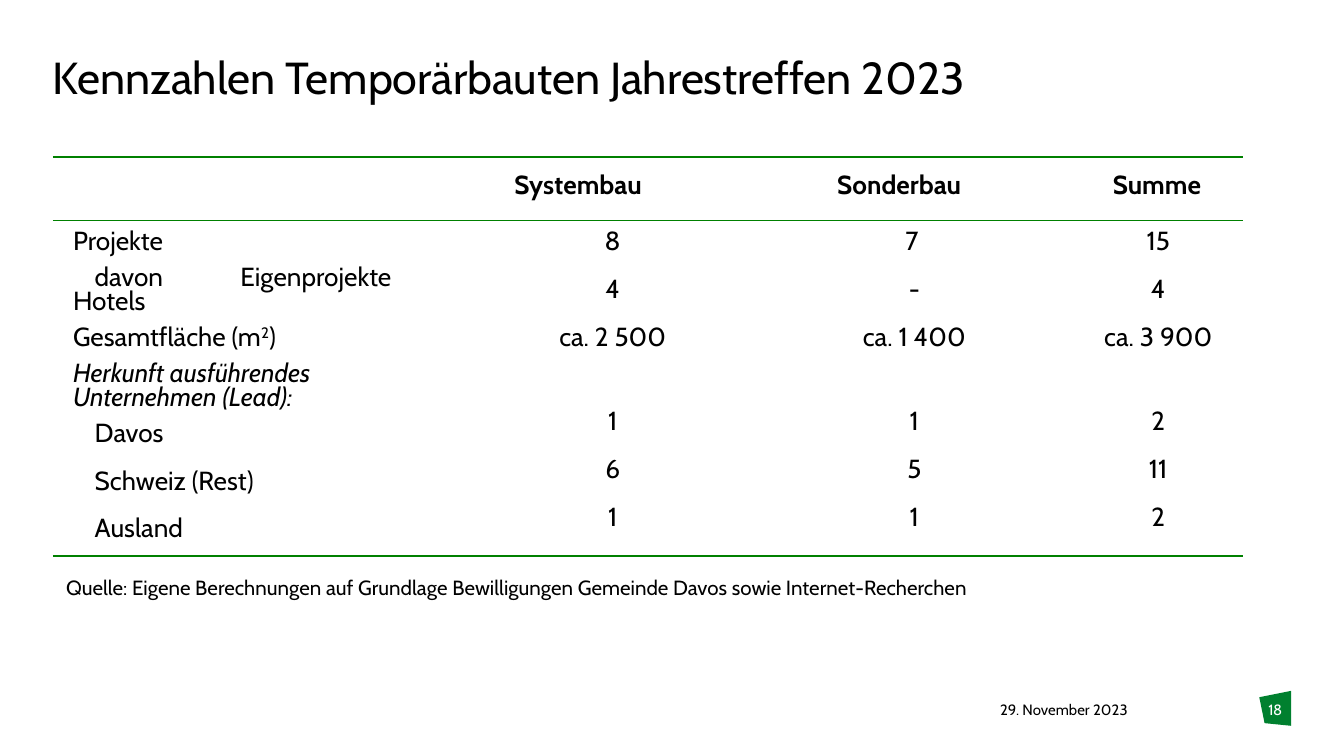
from dataclasses import dataclass

import lxml.etree
import pptx
import pptx.dml.color
import pptx.enum.text
import pptx.oxml.ns
import pptx.util

Cm, Pt = pptx.util.Cm, pptx.util.Pt
RGB = pptx.dml.color.RGBColor
Align = pptx.enum.text.PP_ALIGN
Anchor = pptx.enum.text.MSO_ANCHOR
qn = pptx.oxml.ns.qn


@dataclass(frozen=True)
class Theme:
    font: str = "Cabin"
    text: str = "000000"
    inverse: str = "FFFFFF"
    rule: str = "008000"
    badge: str = "00802F"
    title_size: float = 24
    table_size: float = 14
    source_size: float = 11
    footer_size: float = 8
    thick_rule: float = 1.5
    thin_rule: float = 1
    no_table_style: str = "{2D5ABB26-0587-4C30-8999-92F81FD0307C}"


THEME = Theme()


@dataclass(frozen=True)
class Label:
    text: str
    left: float
    top: float
    width: float
    height: float
    size: float
    color: str = THEME.text
    align: Align = Align.LEFT
    inset: tuple[float, float] = (0, 0)
    line_spacing: float = 1.0
    tracking: int = 0


@dataclass(frozen=True)
class Row:
    label: str  # "^" encloses a superscript
    values: tuple[str, str, str]
    sub_item: bool = False
    group: bool = False
    values_on_top: bool = False


@dataclass(frozen=True)
class Indent:
    left: float = 0.18
    first: float = 0
    right: float = 0


LABELS = [
    Label("29. November 2023", 18.9, 13.24, 3.28, 0.5, THEME.footer_size),
    Label("Kennzahlen Temporärbauten Jahrestreffen 2023", 1, 1.06, 23.42, 1.7,
          THEME.title_size, line_spacing=0.9),
    Label("18", 23.8, 13.24, 0.61, 0.76, THEME.footer_size, THEME.inverse,
          Align.CENTER, tracking=-30),
    Label("Quelle: Eigene Berechnungen auf Grundlage Bewilligungen Gemeinde Davos "
          "sowie Internet-Recherchen", 1, 10.74, 18.47, 0.74, THEME.source_size,
          inset=(0.25, 0.13)),
]

HEADINGS = ("Systembau", "Sonderbau", "Summe")
ROWS = [
    Row("Projekte", ("8", "7", "15")),
    Row("davon Eigenprojekte Hotels", ("4", "-", "4"), sub_item=True),
    Row("Gesamtfläche (m^2^)", ("ca. 2 500", "ca. 1 400", "ca. 3 900")),
    Row("Herkunft ausführendes Unternehmen (Lead):", ("", "", ""), group=True),
    Row("Davos", ("1", "1", "2"), sub_item=True, values_on_top=True),
    Row("Schweiz (Rest)", ("6", "5", "11"), sub_item=True, values_on_top=True),
    Row("Ausland", ("1", "1", "2"), sub_item=True, values_on_top=True),
]

COLUMN_WIDTHS = (6.58, 6.7, 5.82, 3.4)
HEADER_HEIGHT, ROW_HEIGHT = 1.2, 0.9
CELL_INSET = 0.18
HEADING_INDENTS = (Indent(0.56, right=0.57), Indent(right=0.57), Indent(right=0.05))
VALUE_INDENTS = (Indent(1.3), Indent(), Indent())
HANGING_INDENT = Indent(1.09, -1)
LABEL_INDENT, SUB_ITEM_INDENT = Indent(0.2), Indent(0.2, 0.41)


def style_span(span, size: float, color: str, bold: bool = False, italic: bool = False) -> None:
    span.font.name = THEME.font
    span.font.size = Pt(size)
    span.font.color.rgb = RGB.from_string(color)
    span.font.bold = bold
    span.font.italic = italic


def add_label(page, label: Label) -> None:
    box = page.shapes.add_textbox(Cm(label.left), Cm(label.top), Cm(label.width), Cm(label.height))
    frame = box.text_frame
    frame.word_wrap = True
    frame.margin_left = frame.margin_right = Cm(label.inset[0])
    frame.margin_top = frame.margin_bottom = Cm(label.inset[1])
    frame.text = label.text
    para = frame.paragraphs[0]
    para.alignment = label.align
    para.line_spacing = label.line_spacing
    span = para.runs[0]
    style_span(span, label.size, label.color)
    if label.tracking:
        span._r.get_or_add_rPr().set("spc", str(label.tracking))


def add_badge(page) -> None:
    builder = page.shapes.build_freeform(Cm(23.8), Cm(13.18), scale=1.0)
    corners = [(24.4, 13.06), (24.4, 13.72), (23.9, 13.67)]
    builder.add_line_segments([(Cm(x), Cm(y)) for x, y in corners], close=True)
    badge = builder.convert_to_shape()
    badge.shadow.inherit = False
    badge.fill.solid()
    badge.fill.fore_color.rgb = RGB.from_string(THEME.badge)
    badge.line.fill.background()


def set_rules(cell, top: float, bottom: float) -> None:
    properties = cell._tc.get_or_add_tcPr()
    for position, (side, width) in enumerate((("T", top), ("B", bottom))):
        line = lxml.etree.Element(qn(f"a:ln{side}"), w=str(int(Pt(width))))
        if width:
            fill = lxml.etree.SubElement(line, qn("a:solidFill"))
            lxml.etree.SubElement(fill, qn("a:srgbClr"), val=THEME.rule)
        else:
            lxml.etree.SubElement(line, qn("a:noFill"))
        properties.insert(position, line)


def fill_cell(cell, text: str, align: Align, indent: Indent, bold: bool = False,
              italic: bool = False, anchor: Anchor = Anchor.MIDDLE) -> None:
    cell.fill.background()
    cell.margin_left = cell.margin_right = Cm(CELL_INSET)
    cell.margin_top = cell.margin_bottom = 0
    cell.vertical_anchor = anchor
    if not text:
        return
    para = cell.text_frame.paragraphs[0]
    para.alignment = align
    para.line_spacing = Pt(13)
    para.space_before = para.space_after = Pt(4)
    properties = para._p.get_or_add_pPr()
    for name, length in (("marL", indent.left), ("marR", indent.right), ("indent", indent.first)):
        properties.set(name, str(int(Cm(length))))
    for index, part in enumerate(text.split("^")):
        span = para.add_run()
        span.text = part
        style_span(span, THEME.table_size, THEME.text, bold, italic)
        if index % 2:
            span._r.get_or_add_rPr().set("baseline", "30000")


def add_key_figures(page) -> None:
    height = HEADER_HEIGHT + ROW_HEIGHT * len(ROWS)
    table = page.shapes.add_table(len(ROWS) + 1, len(COLUMN_WIDTHS), Cm(1), Cm(2.97),
                                  Cm(sum(COLUMN_WIDTHS)), Cm(height)).table
    table.first_row = table.horz_banding = False
    table._tbl.tblPr.find(qn("a:tableStyleId")).text = THEME.no_table_style
    for column, width in zip(table.columns, COLUMN_WIDTHS):
        column.width = Cm(width)
    for index, line in enumerate(table.rows):
        line.height = Cm(ROW_HEIGHT if index else HEADER_HEIGHT)

    # Header row
    fill_cell(table.cell(0, 0), "", Align.LEFT, LABEL_INDENT)
    for column, (heading, indent) in enumerate(zip(HEADINGS, HEADING_INDENTS), 1):
        fill_cell(table.cell(0, column), heading, Align.CENTER, indent, bold=True)

    # Body rows
    for number, row in enumerate(ROWS, 1):
        fill_cell(table.cell(number, 0), row.label, Align.LEFT if row.group else Align.JUSTIFY,
                  SUB_ITEM_INDENT if row.sub_item else LABEL_INDENT, italic=row.group)
        anchor = Anchor.TOP if row.values_on_top else Anchor.MIDDLE
        for column, (value, indent) in enumerate(zip(row.values, VALUE_INDENTS), 1):
            hanging = (number, column) == (1, 2)
            fill_cell(table.cell(number, column), value, Align.CENTER,
                      HANGING_INDENT if hanging else indent, anchor=anchor)

    # Horizontal rules: one width per row edge, none between body rows
    edges = [THEME.thick_rule, THEME.thin_rule, *[0] * (len(ROWS) - 1), THEME.thick_rule]
    for line, top, bottom in zip(table.rows, edges, edges[1:]):
        for cell in line.cells:
            set_rules(cell, top, bottom)


def main() -> None:
    deck = pptx.Presentation()
    deck.slide_width, deck.slide_height = Cm(25.4), Cm(14.29)
    page = deck.slides.add_slide(deck.slide_layouts[6])
    add_badge(page)
    for label in LABELS:
        add_label(page, label)
    add_key_figures(page)
    deck.save("out.pptx")


if __name__ == "__main__":
    main()
